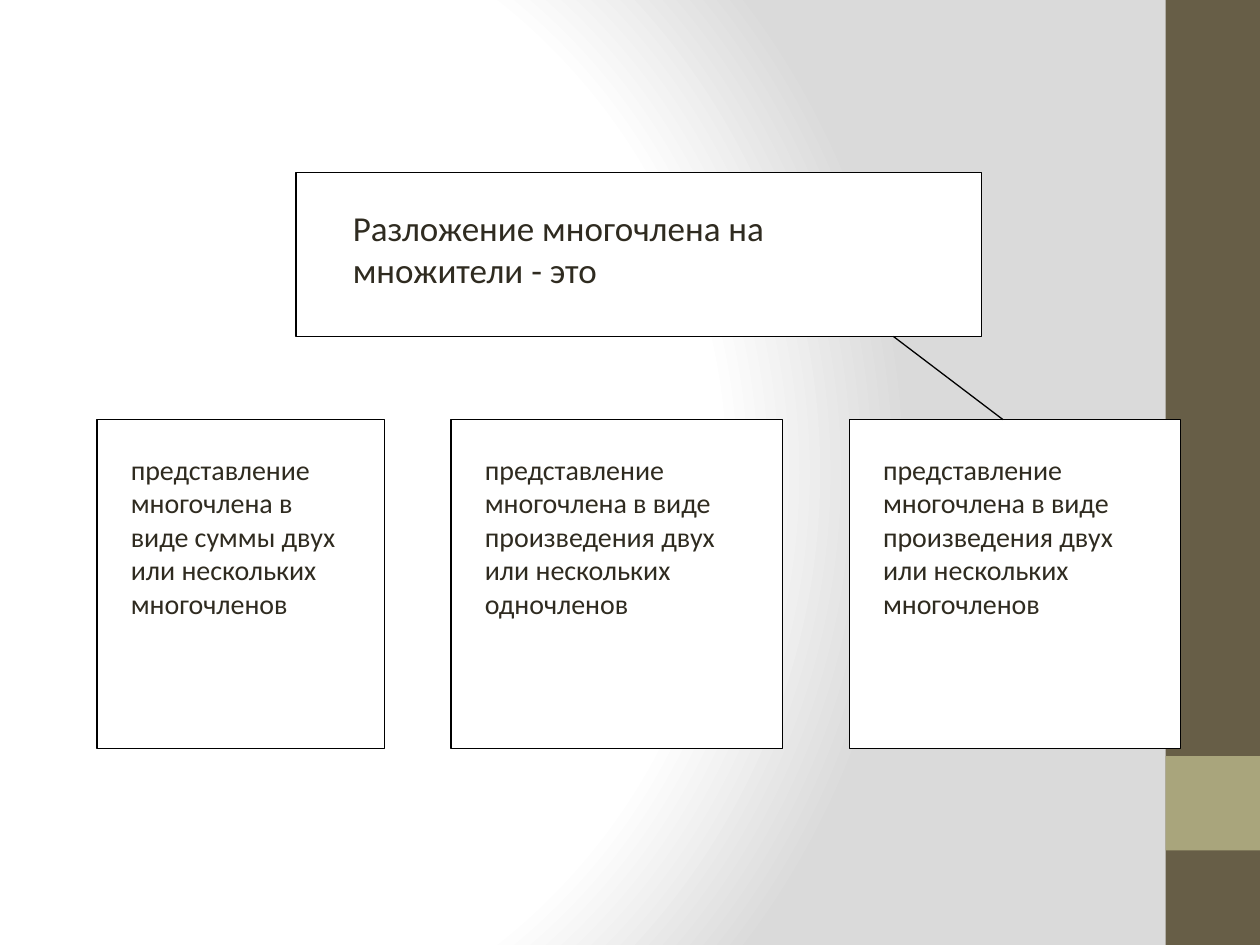
from dataclasses import dataclass

from lxml import etree
from pptx import Presentation
from pptx.dml.color import RGBColor
from pptx.enum import shapes, text
from pptx.oxml import parse_xml
from pptx.oxml.ns import nsdecls, qn
from pptx.util import Inches, Pt


@dataclass(frozen=True)
class Theme:
    font: str = "Calibri"
    ink: str = "2F2B20"
    paper: str = "FFFFFF"
    shade: str = "DADADA"
    outline: str = "000000"
    strip: str = "675E47"
    accent: str = "A9A57C"
    heading_size: int = 20
    card_size: int = 16
    line_width: float = 0.75


THEME = Theme()
HEADING = "Разложение многочлена на множители - это"
# Each card: frame width, height of its text area, wording
CARDS = [
    (2.28, 2.17, "представление многочлена в виде суммы двух или нескольких многочленов"),
    (2.63, 2.17, "представление многочлена в виде произведения двух или нескольких одночленов"),
    (2.63, 1.96, "представление многочлена в виде произведения двух или нескольких многочленов"),
]
CARD_GAP = 0.53


def colour(value):
    return RGBColor.from_string(value)


def paint(shape, fill, line=None):
    shape.fill.solid()
    shape.fill.fore_color.rgb = colour(fill)
    if line:
        shape.line.color.rgb = colour(line)
        shape.line.width = Pt(THEME.line_width)
    else:
        shape.line.fill.background()


def add_box(slide, box, fill, line=None):
    shape = slide.shapes.add_shape(shapes.MSO_SHAPE.RECTANGLE, *map(Inches, box))
    shape.shadow.inherit = False
    paint(shape, fill, line)
    return shape


def write(shape, wording, size):
    paint(shape, THEME.paper, THEME.paper)
    frame = shape.text_frame
    frame.text = wording
    frame.word_wrap = True
    frame.auto_size = text.MSO_AUTO_SIZE.NONE
    frame.vertical_anchor = text.MSO_ANCHOR.TOP
    paragraph = frame.paragraphs[0]
    paragraph.alignment = text.PP_ALIGN.LEFT
    paragraph.font.name = THEME.font
    paragraph.font.size = Pt(size)
    paragraph.font.color.rgb = colour(THEME.ink)


def add_background(slide):
    """Radial gradient, white at the left and grey at the right."""
    slide.background.fill.solid()
    stops = "".join(
        f'<a:gs pos="{position * 1000}"><a:srgbClr val="{value}"/></a:gs>'
        for position, value in [(0, THEME.paper), (75, THEME.paper), (100, THEME.shade)]
    )
    gradient = parse_xml(
        f'<a:gradFill {nsdecls("a")} rotWithShape="1"><a:gsLst>{stops}</a:gsLst>'
        '<a:path path="circle"><a:fillToRect l="20000" t="50000" r="100000" b="50000"/>'
        "</a:path></a:gradFill>"
    )
    properties = slide.element.find(".//" + qn("p:bgPr"))
    properties.replace(properties.find(qn("a:solidFill")), gradient)


def add_side_strip(slide, left, top, width, height):
    add_box(slide, (left, top, width, height), THEME.strip)
    add_box(slide, (left, top + 0.8 * height, width, width), THEME.accent)


def add_heading(slide, left, top, width, height):
    frame = add_box(slide, (left, top, width, height), THEME.paper, THEME.outline)
    title = slide.shapes.title
    title.left, title.top = Inches(left + 0.35), Inches(top + 0.22)
    title.width, title.height = Inches(width - 0.7), Inches(height - 0.43)
    write(title, HEADING, THEME.heading_size)
    # Bring the title in front of its frame
    frame.element.addnext(title.element)


def add_cards(slide, left, top, height):
    for width, text_height, wording in CARDS:
        add_box(slide, (left, top, width, height), THEME.paper, THEME.outline)
        area = (left + 0.17, top + 0.21, width - 0.35, text_height)
        write(add_box(slide, area, THEME.paper), wording, THEME.card_size)
        left += width + CARD_GAP


def add_link(slide, start, end):
    """Line from the heading to the right answer."""
    link = slide.shapes.add_connector(
        shapes.MSO_CONNECTOR.STRAIGHT, *map(Inches, (*start, *end))
    )
    link.line.color.rgb = colour(THEME.outline)
    link.line.width = Pt(THEME.line_width)
    etree.SubElement(link.element.spPr, qn("a:effectLst"))


def main():
    presentation = Presentation()
    presentation.slide_width, presentation.slide_height = Inches(10), Inches(7.5)
    slide = presentation.slides.add_slide(presentation.slide_layouts[5])
    add_background(slide)
    add_side_strip(slide, 9.25, 0, 0.75, 7.5)
    add_heading(slide, 2.35, 1.37, 5.44, 1.3)
    add_cards(slide, 0.77, 3.33, 2.61)
    add_link(slide, (7.09, 2.67), (7.96, 3.33))
    presentation.save("out.pptx")


if __name__ == "__main__":
    main()
